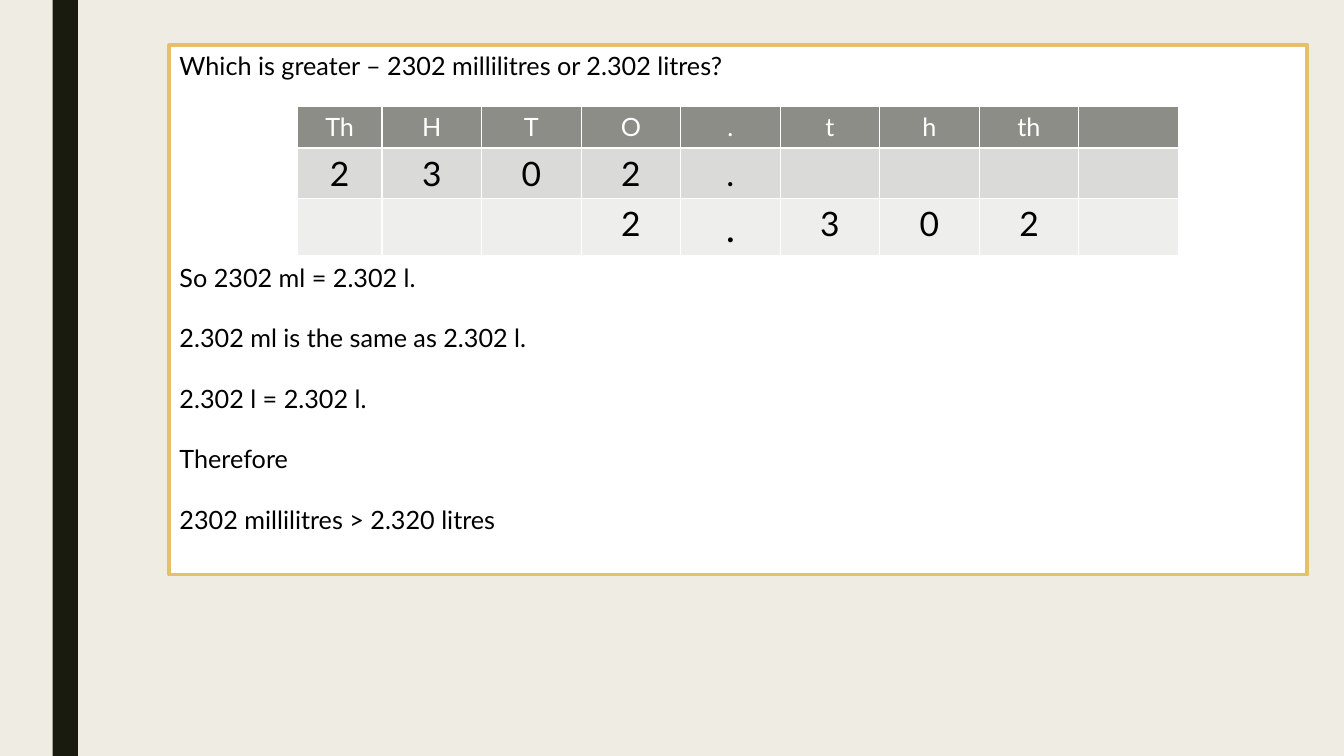
"""Build a slide that compares millilitres and litres in a place value table."""
from dataclasses import dataclass

from lxml import etree
from pptx import Presentation
from pptx import util as u
from pptx.dml.color import RGBColor
from pptx.enum import shapes, text
from pptx.oxml.ns import qn

FONT = "Lato"
LINE = 21.6
TABLE_LEFT, TABLE_TOP = 212.4, 76.3
FIRST_COL, OTHER_COL, ROW_HEIGHT = 60.5, 71.1, 29.4


@dataclass
class Statement:
    """A line of the argument and the number of lines left free above it."""
    words: str
    gap: int = 1


@dataclass
class Row:
    """A row of the place value table."""
    values: list[str]
    fill: str
    color: str
    size: float
    point_size: float


STATEMENTS = [
    Statement("Which is greater – 2302 millilitres or 2.302 litres?", 0),
    Statement("So 2302 ml = 2.302 l.", 6),
    Statement("2.302 ml is the same as 2.302 l."),
    Statement("2.302 l = 2.302 l."),
    Statement("Therefore"),
    Statement("2302 millilitres > 2.320 litres"),
]
ROWS = [
    Row(["Th", "H", "T", "O", ".", "t", "h", "th", ""], "8C8D86", "FFFFFF", 18, 18),
    Row(["2", "3", "0", "2", ".", "", "", "", ""], "DADBD9", "000000", 24, 24),
    Row(["", "", "", "2", ".", "3", "0", "2", ""], "EEEEED", "000000", 24, 28),
]


def paint(fill, color: str) -> None:
    """Give a fill one solid colour."""
    fill.solid()
    fill.fore_color.rgb = RGBColor.from_string(color)


def set_font(p, size: float, color: str) -> None:
    """Format a whole paragraph."""
    p.font.name = FONT
    p.font.size = u.Pt(size)
    p.font.bold = False
    paint(p.font.fill, color)


def add_side_bar(slide) -> None:
    """Draw the dark bar on the left."""
    sp = slide.shapes.add_shape(shapes.MSO_SHAPE.RECTANGLE,
                                u.Pt(37.6), 0, u.Pt(18), u.Pt(540))
    sp.shadow.inherit = False
    paint(sp.fill, "191B0E")
    sp.line.fill.background()


def fill_body(sp, statements: list[Statement]) -> None:
    """Frame the body placeholder and write the argument in it."""
    sp.left, sp.top, sp.width, sp.height = map(u.Pt, (121, 32.4, 812.9, 378))
    paint(sp.fill, "FFFFFF")
    paint(sp.line.fill, "E6C069")
    sp.line.width = u.Pt(2.75)
    tf = sp.text_frame
    tf.word_wrap = True
    tf.auto_size = text.MSO_AUTO_SIZE.NONE
    tf.vertical_anchor = text.MSO_ANCHOR.TOP
    for i, statement in enumerate(statements):
        p = tf.paragraphs[0] if i == 0 else tf.add_paragraph()
        p.text = statement.words
        p.space_before = u.Pt(statement.gap * LINE)
        set_font(p, 18, "000000")
        pPr = p._p.get_or_add_pPr()
        pPr.set("marL", "0")
        pPr.set("indent", "0")
        pPr.find(qn("a:defRPr")).addprevious(etree.Element(qn("a:buNone")))


def add_borders(cell, color: str, width: float) -> None:
    """Draw the four edges of a cell."""
    tcPr = cell._tc.get_or_add_tcPr()
    for i, edge in enumerate(("lnL", "lnR", "lnT", "lnB")):
        ln = etree.Element(qn(f"a:{edge}"), w=str(u.Pt(width)))
        fill = etree.SubElement(ln, qn("a:solidFill"))
        etree.SubElement(fill, qn("a:srgbClr"), val=color)
        tcPr.insert(i, ln)


def add_place_value_table(slide, rows: list[Row]) -> None:
    """Draw the place value table."""
    n = len(rows[0].values)
    widths = [FIRST_COL] + [OTHER_COL] * (n - 1)
    table = slide.shapes.add_table(
        len(rows), n, u.Pt(TABLE_LEFT), u.Pt(TABLE_TOP),
        u.Pt(sum(widths)), u.Pt(ROW_HEIGHT * len(rows))).table
    for column, width in zip(table.columns, widths):
        column.width = u.Pt(width)
    for i, row in enumerate(rows):
        table.rows[i].height = u.Pt(ROW_HEIGHT)
        for j, value in enumerate(row.values):
            cell = table.cell(i, j)
            paint(cell.fill, row.fill)
            add_borders(cell, "FFFFFF", 1)
            if value:
                p = cell.text_frame.paragraphs[0]
                p.text = value
                p.alignment = text.PP_ALIGN.CENTER
                set_font(p, row.point_size if value == "." else row.size, row.color)


def main() -> None:
    """Build and save the slide."""
    prs = Presentation()
    prs.slide_width, prs.slide_height = u.Pt(960), u.Pt(540)
    slide = prs.slides.add_slide(prs.slide_layouts[1])
    paint(slide.background.fill, "EFEDE3")
    title = slide.shapes.title._element
    title.getparent().remove(title)
    add_side_bar(slide)
    fill_body(slide.placeholders[1], STATEMENTS)
    add_place_value_table(slide, ROWS)
    prs.save("out.pptx")


if __name__ == "__main__":
    main()
